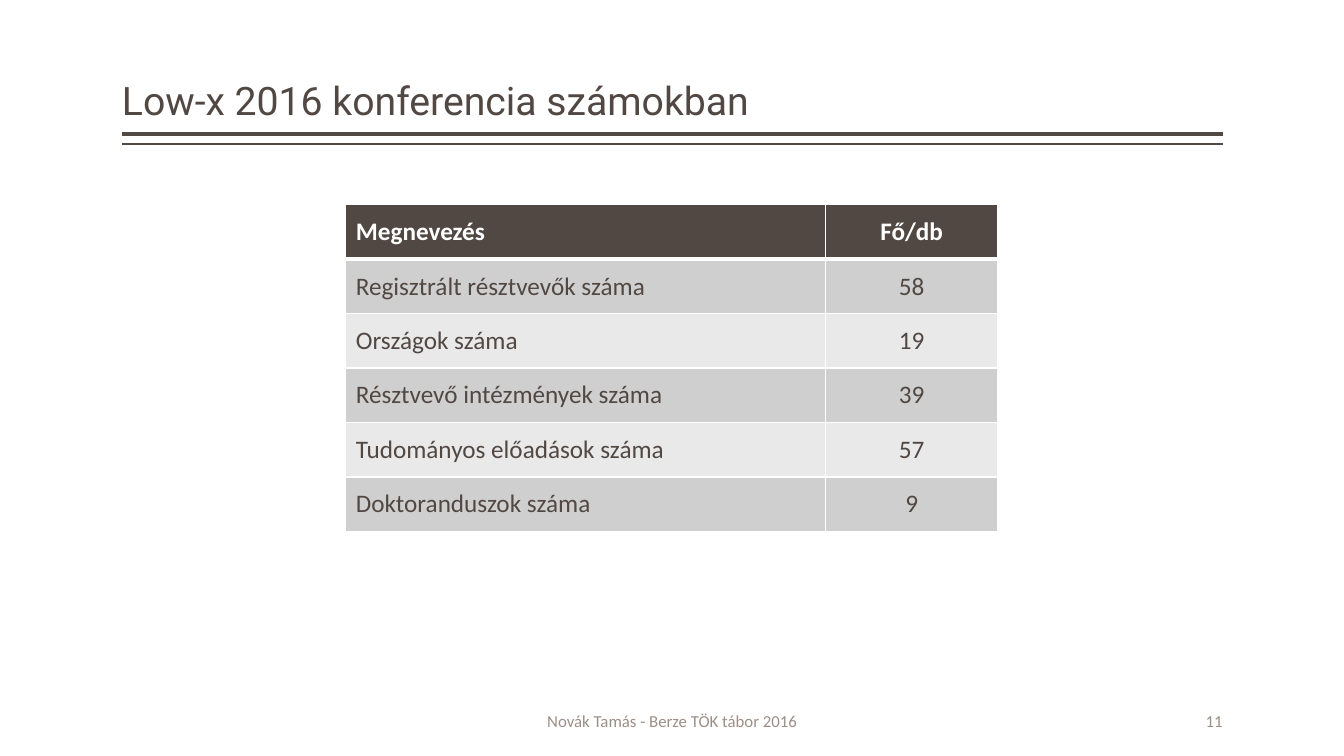
from dataclasses import dataclass

from lxml import etree
from pptx import Presentation
from pptx import util as u
from pptx.dml.color import RGBColor
from pptx.enum import shapes, text
from pptx.oxml.ns import qn

Pt = u.Pt
LEFT, RIGHT = 87.1, 873.4


@dataclass(frozen=True)
class Theme:
    dark: str = "514843"
    muted: str = "9D8F88"
    white: str = "FFFFFF"
    bands: tuple = ("D0CFCF", "E9E9E9")
    title_font: str = "Roboto"
    body_font: str = "Calibri"
    title_size: int = 28
    table_size: int = 18
    footer_size: int = 12


THEME = Theme()
ALIGN = text.PP_ALIGN

HEADINGS = ("Megnevezés", "Fő/db")
FIGURES = (
    ("Regisztrált résztvevők száma", 58),
    ("Országok száma", 19),
    ("Résztvevő intézmények száma", 39),
    ("Tudományos előadások száma", 57),
    ("Doktoranduszok száma", 9),
)


def add_run(paragraph, wording, font, size, color, bold=False):
    run = paragraph.add_run()
    run.text = wording
    run.font.name = font
    run.font.size = Pt(size)
    run.font.bold = bold
    run.font.color.rgb = RGBColor.from_string(color)


def set_frame(frame, anchor):
    """Wrap the text and drop the side insets."""
    frame.word_wrap = True
    frame.auto_size = text.MSO_AUTO_SIZE.NONE
    frame.vertical_anchor = anchor
    frame.margin_left = frame.margin_right = 0
    frame.margin_top = frame.margin_bottom = Pt(3.6)


def fill_title(slide, wording):
    title = slide.shapes.title
    title.left, title.top = Pt(LEFT), Pt(5.8)
    title.width, title.height = Pt(RIGHT - LEFT), Pt(86.4)
    set_frame(title.text_frame, text.MSO_ANCHOR.BOTTOM)
    paragraph = title.text_frame.paragraphs[0]
    paragraph.alignment = ALIGN.LEFT
    paragraph.line_spacing = 0.9
    add_run(paragraph, wording, THEME.title_font, THEME.title_size, THEME.dark)


def add_rule(slide, y, weight):
    rule = slide.shapes.add_connector(
        shapes.MSO_CONNECTOR.STRAIGHT, Pt(RIGHT), Pt(y), Pt(LEFT), Pt(y))
    rule.line.color.rgb = RGBColor.from_string(THEME.dark)
    rule.line.width = Pt(weight)
    etree.SubElement(rule._element.spPr, qn("a:effectLst"))


def add_footer(slide, wording, left, width, alignment):
    footer = slide.shapes.add_textbox(Pt(left), Pt(500.4), Pt(width), Pt(28.8))
    set_frame(footer.text_frame, text.MSO_ANCHOR.MIDDLE)
    paragraph = footer.text_frame.paragraphs[0]
    paragraph.alignment = alignment
    add_run(paragraph, wording, THEME.body_font, THEME.footer_size, THEME.muted)


def set_borders(cell, weights):
    """Draw white borders; weights are for left, right, top and bottom."""
    properties = cell._tc.get_or_add_tcPr()
    for index, (side, weight) in enumerate(zip("LRTB", weights)):
        border = etree.Element(qn(f"a:ln{side}"), w=str(Pt(weight)))
        solid = etree.SubElement(border, qn("a:solidFill"))
        etree.SubElement(solid, qn("a:srgbClr"), val=THEME.white)
        properties.insert(index, border)


def format_cell(cell, wording, row, alignment):
    header = row == 0
    cell.fill.solid()
    cell.fill.fore_color.rgb = RGBColor.from_string(
        THEME.dark if header else THEME.bands[(row - 1) % 2])
    cell.vertical_anchor = text.MSO_ANCHOR.MIDDLE
    paragraph = cell.text_frame.paragraphs[0]
    paragraph.alignment = alignment
    add_run(paragraph, str(wording), THEME.body_font, THEME.table_size,
            THEME.white if header else THEME.dark, bold=header)
    set_borders(cell, (1, 1, 3 if row == 1 else 1, 3 if header else 1))


def add_figures_table(slide):
    rows = (HEADINGS, *FIGURES)
    widths, row_height = (342.7, 123.1), 38.9
    table = slide.shapes.add_table(
        len(rows), len(widths), Pt(247), Pt(146.2),
        Pt(sum(widths)), Pt(row_height * len(rows))).table
    for column, width in zip(table.columns, widths):
        column.width = Pt(width)
    for row, values in enumerate(rows):
        table.rows[row].height = Pt(row_height)
        for column, alignment in enumerate((ALIGN.LEFT, ALIGN.CENTER)):
            format_cell(table.cell(row, column), values[column], row, alignment)


def main():
    deck = Presentation()
    deck.slide_width, deck.slide_height = Pt(960), Pt(540)
    slide = deck.slides.add_slide(deck.slide_layouts.get_by_name("Title Only"))
    add_rule(slide, 95.8, 3)
    add_rule(slide, 103, 1)
    fill_title(slide, "Low-x 2016 konferencia számokban")
    add_figures_table(slide)
    add_footer(slide, "Novák Tamás - Berze TÖK tábor 2016", 231.1, 498.2, ALIGN.CENTER)
    add_footer(slide, "11", RIGHT - 144, 144, ALIGN.RIGHT)
    deck.save("out.pptx")


if __name__ == "__main__":
    main()
